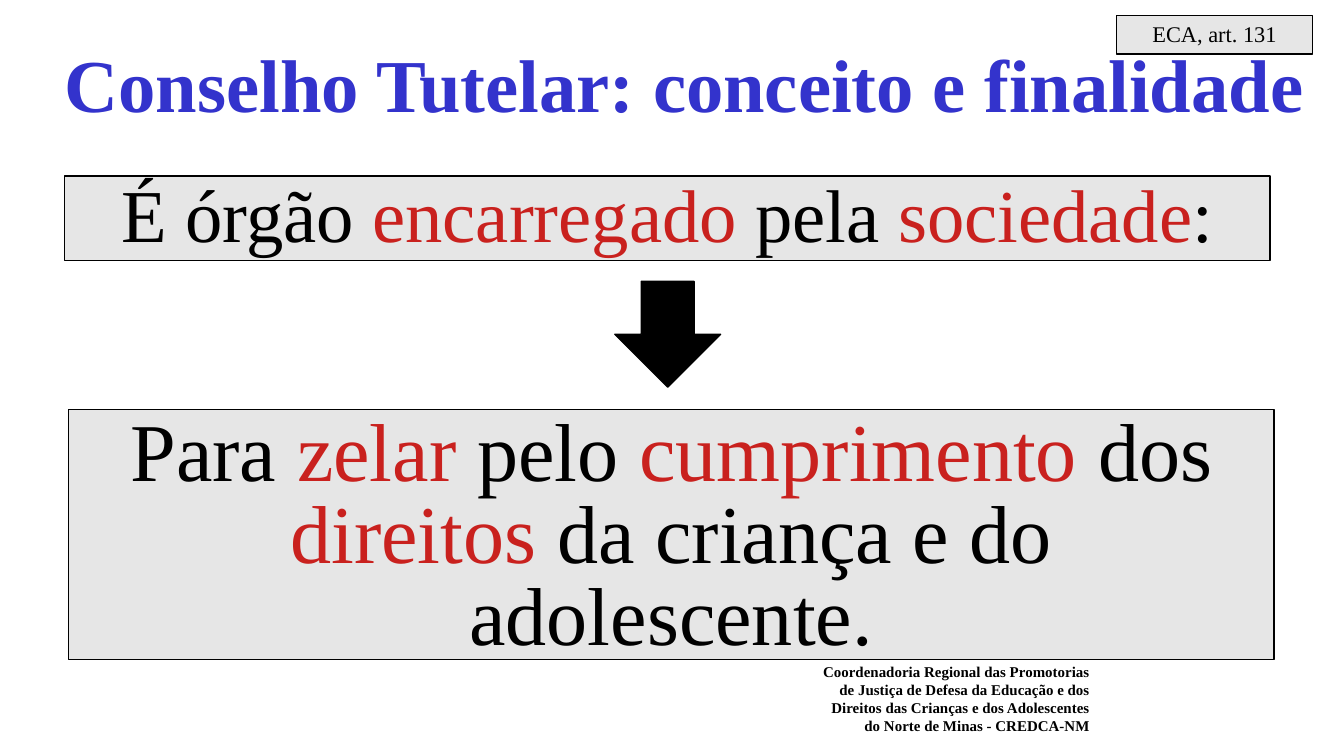
from pptx import Presentation
from pptx import util as u
from pptx.dml.color import RGBColor
from pptx.enum import shapes, text

HUES = {"ink": "000000", "red": "C9211E", "blue": "3333CC", "gray": "E6E6E6"}
FONT = "Times New Roman"


def hue(name):
    """Return the named colour."""
    return RGBColor.from_string(HUES[name])


def write(frame, runs, size, align=text.PP_ALIGN.CENTER, bold=False, gap=None):
    """Write (words, colour) runs into the first paragraph of a frame."""
    frame.word_wrap = True
    frame.auto_size = text.MSO_AUTO_SIZE.NONE
    frame.margin_left = frame.margin_right = u.Cm(0.25)
    frame.margin_top = frame.margin_bottom = u.Cm(0.13)
    para = frame.paragraphs[0]
    para.alignment = align
    para.space_before = u.Pt(0)
    if gap:
        para.line_spacing = gap
    for words, name in runs:
        run = para.add_run()
        run.text = words
        run.font.name = FONT
        run.font.size = u.Pt(size)
        run.font.bold = bold
        run.font.color.rgb = hue(name)


def shape(slide, kind, spot, fill):
    """Add a filled shape with a thin black outline."""
    item = slide.shapes.add_shape(kind, *map(u.Cm, spot))
    item.shadow.inherit = False
    item.fill.solid()
    item.fill.fore_color.rgb = hue(fill)
    item.line.color.rgb = hue("ink")
    item.line.width = u.Pt(0.75)
    return item


def panel(slide, spot, runs, size, gap):
    """Add a gray box with centred text at its top."""
    item = shape(slide, shapes.MSO_SHAPE.RECTANGLE, spot, "gray")
    item.text_frame.vertical_anchor = text.MSO_ANCHOR.TOP
    write(item.text_frame, runs, size, gap=gap)


def title(slide, spot, words):
    """Place and format the title."""
    item = slide.shapes.title
    item.left, item.top, item.width, item.height = map(u.Cm, spot)
    item.text_frame.vertical_anchor = text.MSO_ANCHOR.MIDDLE
    write(item.text_frame, [(words, "blue")], 40, bold=True, gap=1.0)


def credit(slide, spot, words):
    """Add the small right-aligned footer."""
    item = slide.shapes.add_textbox(*map(u.Cm, spot))
    write(item.text_frame, [(words, "ink")], 8, text.PP_ALIGN.RIGHT, True)


def main():
    """Build and save the slide."""
    deck = Presentation()
    deck.slide_width, deck.slide_height = u.Cm(25.4), u.Cm(14.29)
    slide = deck.slides.add_slide(deck.slide_layouts[5])
    credit(slide, (15.29, 12.4, 5.56, 1.95),
           "Coordenadoria Regional das Promotorias de Justiça de Defesa da "
           "Educação e dos Direitos das Crianças e dos Adolescentes do Norte "
           "de Minas - CREDCA-NM")
    title(slide, (0.74, 0.53, 24.38, 2.08),
          "Conselho Tutelar: conceito e finalidade")
    panel(slide, (21.1, 0.29, 3.71, 0.73), [("ECA, art. 131", "ink")], 12, 0.93)
    panel(slide, (1.22, 3.33, 22.78, 1.6),
          [("É órgão ", "ink"), ("encarregado", "red"), (" pela ", "ink"),
           ("sociedade", "red"), (":", "ink")], 40, 0.83)
    panel(slide, (1.3, 7.74, 22.78, 4.73),
          [("Para ", "ink"), ("zelar", "red"), (" pelo ", "ink"),
           ("cumprimento", "red"), (" dos ", "ink"), ("direitos", "red"),
           (" da criança e do adolescente.", "ink")], 44, 0.83)
    shape(slide, shapes.MSO_SHAPE.DOWN_ARROW, (11.62, 5.32, 2, 2), "ink")
    deck.save("out.pptx")


if __name__ == "__main__":
    main()
